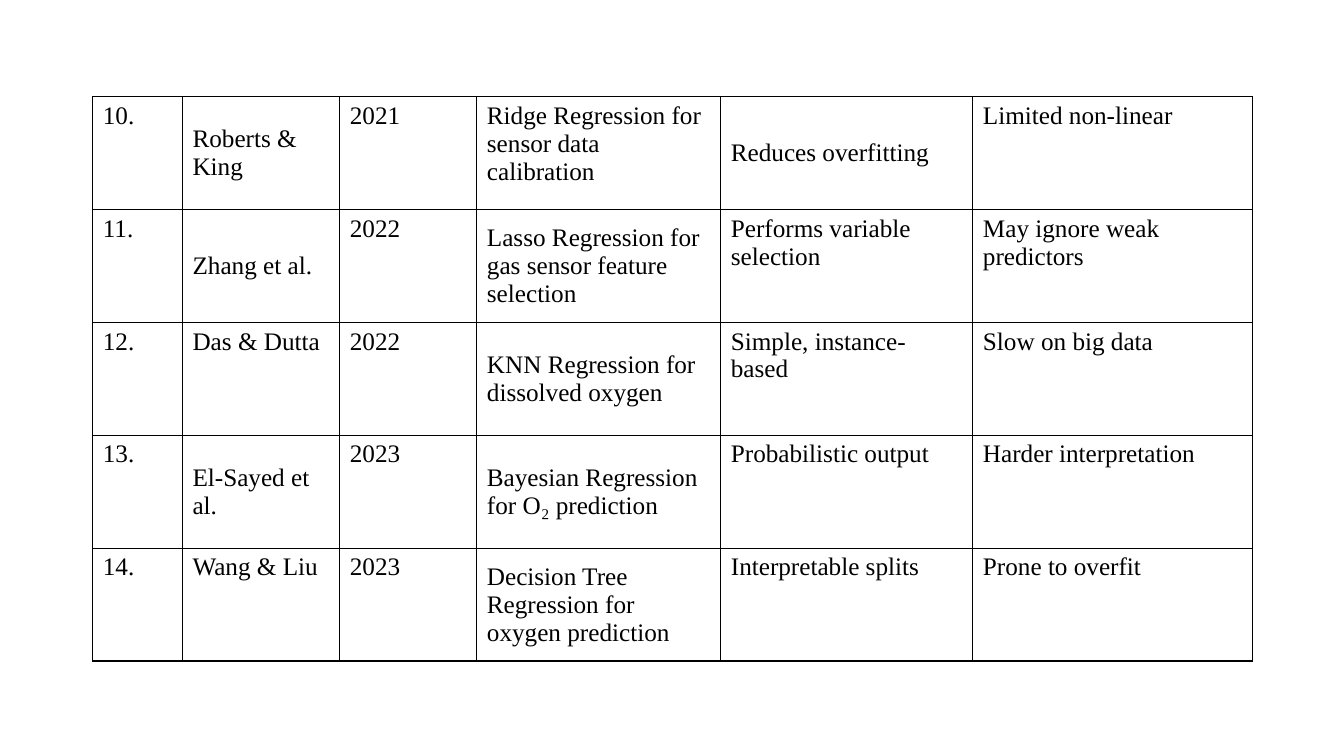
from dataclasses import astuple, dataclass

from lxml import etree
from pptx import Presentation
from pptx import util as u
from pptx.dml.color import RGBColor
from pptx.enum import text
from pptx.oxml.ns import qn
from pptx.table import Table, _Cell

COLORS = {"ink": "000000", "paper": "FFFFFF"}
TEXT_FORMAT = {"name": "Times New Roman", "size": u.Pt(18), "bold": False}
COLUMN_WIDTHS = (0.89, 1.56, 1.36, 2.42, 2.5, 2.77)
ROW_HEIGHT = 1.12


@dataclass(frozen=True)
class Study:
    number: str
    authors: str
    year: str
    method: str
    strength: str
    weakness: str


STUDIES = (
    Study("10.", "Roberts & King", "2021", "Ridge Regression for sensor data calibration",
          "Reduces overfitting", "Limited non-linear"),
    Study("11.", "Zhang et al.", "2022", "Lasso Regression for gas sensor feature selection",
          "Performs variable selection", "May ignore weak predictors"),
    Study("12.", "Das & Dutta", "2022", "KNN Regression for dissolved oxygen",
          "Simple, instance-based", "Slow on big data"),
    Study("13.", "El-Sayed et al.", "2023", "Bayesian Regression for O₂ prediction",
          "Probabilistic output", "Harder interpretation"),
    Study("14.", "Wang & Liu", "2023", "Decision Tree Regression for oxygen prediction",
          "Interpretable splits", "Prone to overfit"),
)
# Columns whose text is vertically centred, row by row
CENTRED_COLUMNS = ({1, 4}, {1, 3}, {3}, {1, 3}, {3})


def add_borders(cell: _Cell) -> None:
    """Outline all four sides; border elements must precede the cell fill."""
    properties = cell._tc.get_or_add_tcPr()
    for position, side in enumerate(("lnL", "lnR", "lnT", "lnB")):
        line = etree.Element(qn(f"a:{side}"), w=str(u.Pt(1)))
        fill = etree.SubElement(line, qn("a:solidFill"))
        etree.SubElement(fill, qn("a:srgbClr"), val=COLORS["ink"])
        properties.insert(position, line)


def fill_cell(cell: _Cell, words: str, centred: bool) -> None:
    cell.fill.solid()
    cell.fill.fore_color.rgb = RGBColor.from_string(COLORS["paper"])
    add_borders(cell)
    cell.vertical_anchor = text.MSO_ANCHOR.MIDDLE if centred else text.MSO_ANCHOR.TOP
    span = cell.text_frame.paragraphs[0].add_run()
    span.text = words
    for name, value in TEXT_FORMAT.items():
        setattr(span.font, name, value)
    span.font.color.rgb = RGBColor.from_string(COLORS["ink"])


def fill_table(table: Table) -> None:
    table.first_row = table.horz_banding = False
    for column, width in zip(table.columns, COLUMN_WIDTHS):
        column.width = u.Inches(width)
    for row, study, centred in zip(table.rows, STUDIES, CENTRED_COLUMNS):
        row.height = u.Inches(ROW_HEIGHT)
        for index, words in enumerate(astuple(study)):
            fill_cell(row.cells[index], words, index in centred)


def main() -> None:
    deck = Presentation()
    deck.slide_width, deck.slide_height = u.Inches(13.33), u.Inches(7.5)
    page = deck.slides.add_slide(deck.slide_layouts.get_by_name("Blank"))
    frame = page.shapes.add_table(
        len(STUDIES), len(COLUMN_WIDTHS), u.Inches(0.92), u.Inches(0.96),
        u.Inches(sum(COLUMN_WIDTHS)), u.Inches(ROW_HEIGHT * len(STUDIES)))
    fill_table(frame.table)
    deck.save("out.pptx")


if __name__ == "__main__":
    main()
